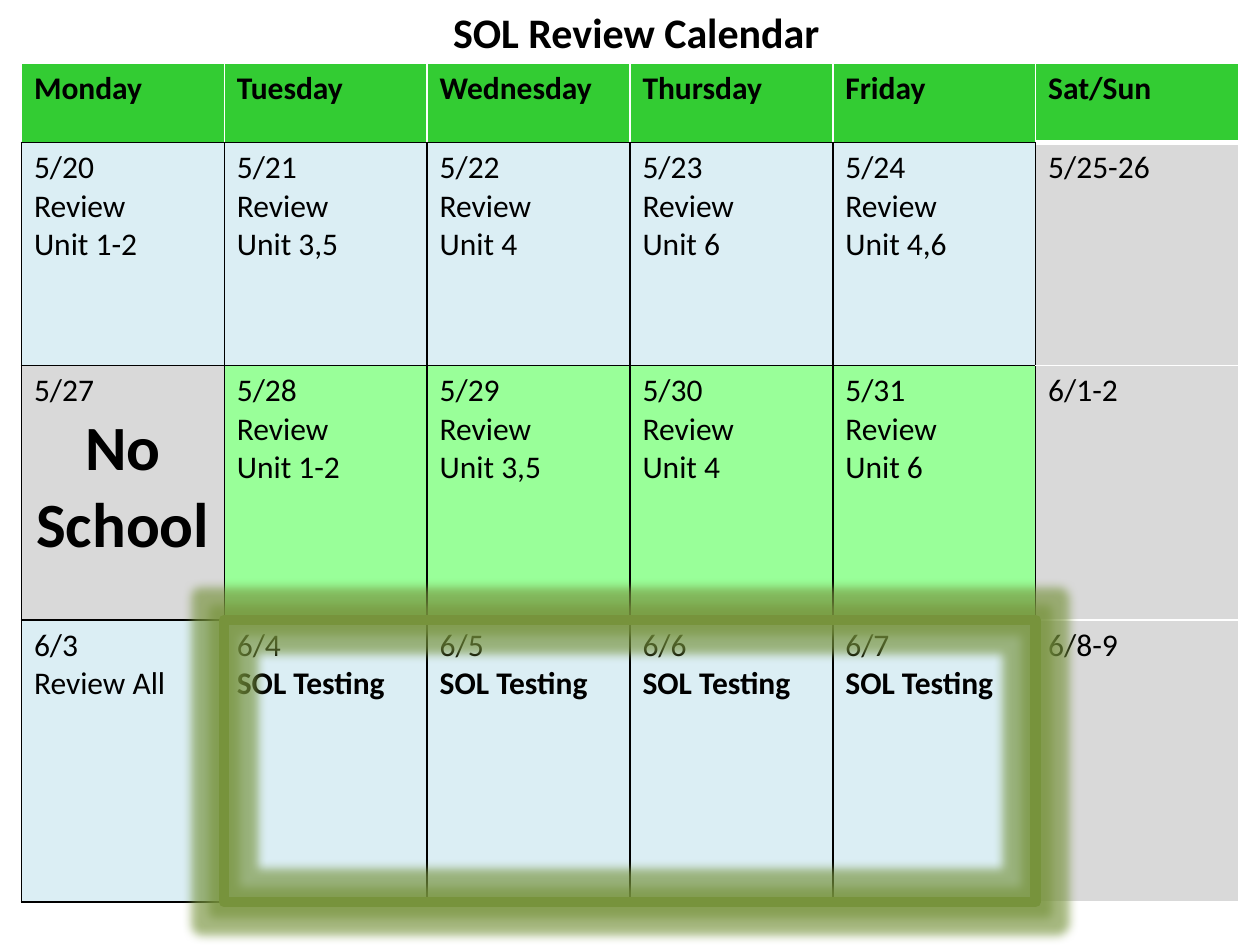
import dataclasses

import lxml.etree
import pptx
import pptx.dml.color
import pptx.enum.shapes
import pptx.enum.text
import pptx.oxml
import pptx.oxml.ns
import pptx.util

RGB = pptx.dml.color.RGBColor
BLACK = RGB(0x00, 0x00, 0x00)
WHITE = RGB(0xFF, 0xFF, 0xFF)
GREEN = RGB(0x33, 0xCC, 0x33)
LIME = RGB(0x99, 0xFF, 0x99)
BLUE = RGB(0xDB, 0xEE, 0xF4)
GRAY = RGB(0xD9, 0xD9, 0xD9)
OLIVE = RGB(0x77, 0x93, 0x3C)

FONT = "Calibri"
WIDE, HIGH = pptx.util.Inches(10), pptx.util.Inches(7.5)
LEFT, TOP = pptx.util.Inches(0.17), pptx.util.Inches(0.5)
COL = pptx.util.Inches(1.61)
ROWS = [pptx.util.Inches(high) for high in (0.63, 1.77, 2.02, 2.24)]
CENTER = pptx.enum.text.PP_ALIGN.CENTER


@dataclasses.dataclass
class Day:
    text: str
    fill: RGB
    bold: bool = False  # applies to the last line
    size: int = 18  # applies to the last line


@dataclasses.dataclass
class Edge:
    side: str
    color: RGB
    width: float = 1


def review(date: str, unit: str, fill: RGB) -> Day:
    return Day(f"{date}\nReview\nUnit {unit}", fill)


NAMES = ("Monday", "Tuesday", "Wednesday", "Thursday", "Friday", "Sat/Sun")
FIRST = {"5/20": "1-2", "5/21": "3,5", "5/22": "4", "5/23": "6", "5/24": "4,6"}
SECOND = {"5/28": "1-2", "5/29": "3,5", "5/30": "4", "5/31": "6"}
TESTS = ("6/4", "6/5", "6/6", "6/7")

WEEKS = [
    [Day(name, GREEN, bold=True) for name in NAMES],
    [review(date, unit, BLUE) for date, unit in FIRST.items()]
    + [Day("5/25-26", GRAY)],
    [Day("5/27\nNo School", GRAY, bold=True, size=36)]
    + [review(date, unit, LIME) for date, unit in SECOND.items()]
    + [Day("6/1-2", GRAY)],
    [Day("6/3\nReview All", BLUE)]
    + [Day(f"{date}\nSOL Testing", BLUE, bold=True) for date in TESTS]
    + [Day("6/8-9", GRAY)],
]


def style(part, size: float, bold: bool) -> None:
    for run in part.runs:
        run.font.name = FONT
        run.font.size = pptx.util.Pt(size)
        run.font.bold = bold
        run.font.color.rgb = BLACK


def edges(row: int, col: int) -> list[Edge]:
    """Black grid for school days, white around the header and weekend."""
    head, rest = row == 0, col == len(NAMES) - 1
    pale = WHITE if head or rest else BLACK
    return [
        Edge("L", WHITE if head else BLACK),
        Edge("R", pale),
        Edge("T", pale, 3 if rest and row == 1 else 1),
        Edge("B", WHITE if rest else BLACK, 3 if rest and head else 1),
    ]


def border(cell, lines: list[Edge]) -> None:
    props = cell._tc.get_or_add_tcPr()
    for spot, edge in enumerate(lines):
        props.insert(spot, pptx.oxml.parse_xml(
            f'<a:ln{edge.side} {pptx.oxml.ns.nsdecls("a")} '
            f'w="{pptx.util.Pt(edge.width)}"><a:solidFill>'
            f'<a:srgbClr val="{edge.color}"/></a:solidFill></a:ln{edge.side}>'))


def fill(cell, day: Day) -> None:
    cell.fill.solid()
    cell.fill.fore_color.rgb = day.fill
    cell.text_frame.text = day.text
    *lines, last = cell.text_frame.paragraphs
    for line in lines:
        style(line, 18, False)
    style(last, day.size, day.bold)
    if day.size > 18:
        last.alignment = CENTER


def calendar(slide) -> None:
    table = slide.shapes.add_table(
        len(WEEKS), len(NAMES), LEFT, TOP, COL * len(NAMES), sum(ROWS)).table
    table.first_row = table.horz_banding = False
    for col in table.columns:
        col.width = COL
    for row, week in enumerate(WEEKS):
        table.rows[row].height = ROWS[row]
        for col, day in enumerate(week):
            cell = table.cell(row, col)
            fill(cell, day)
            border(cell, edges(row, col))


def title(slide) -> None:
    head = slide.shapes.title
    head.left, head.top = int(WIDE * 0.3), 0
    head.width, head.height = int(WIDE * 0.41), TOP
    frame = head.text_frame
    frame.text = "SOL Review Calendar"
    frame.word_wrap = True
    frame.auto_size = pptx.enum.text.MSO_AUTO_SIZE.NONE
    frame.vertical_anchor = pptx.enum.text.MSO_ANCHOR.TOP
    frame.paragraphs[0].alignment = CENTER
    style(frame.paragraphs[0], 24, True)


def frame(slide) -> None:
    """Glowing outline around the four testing days."""
    box = slide.shapes.add_shape(
        pptx.enum.shapes.MSO_SHAPE.RECTANGLE, LEFT + COL,
        TOP + sum(ROWS[:3]), COL * len(TESTS), ROWS[3])
    box.shadow.inherit = False
    box.fill.background()
    box.line.color.rgb = OLIVE
    box.line.width = pptx.util.Pt(6)
    lxml.etree.SubElement(box.line._ln, pptx.oxml.ns.qn("a:round"))
    effects = box._element.spPr.find(pptx.oxml.ns.qn("a:effectLst"))
    effects.append(pptx.oxml.parse_xml(
        f'<a:glow {pptx.oxml.ns.nsdecls("a")} rad="{pptx.util.Pt(11)}">'
        f'<a:srgbClr val="{OLIVE}"><a:alpha val="65000"/></a:srgbClr></a:glow>'))


def main() -> None:
    deck = pptx.Presentation()
    deck.slide_width, deck.slide_height = WIDE, HIGH
    slide = deck.slides.add_slide(deck.slide_layouts[5])
    calendar(slide)
    title(slide)
    frame(slide)
    deck.save("out.pptx")


if __name__ == "__main__":
    main()
